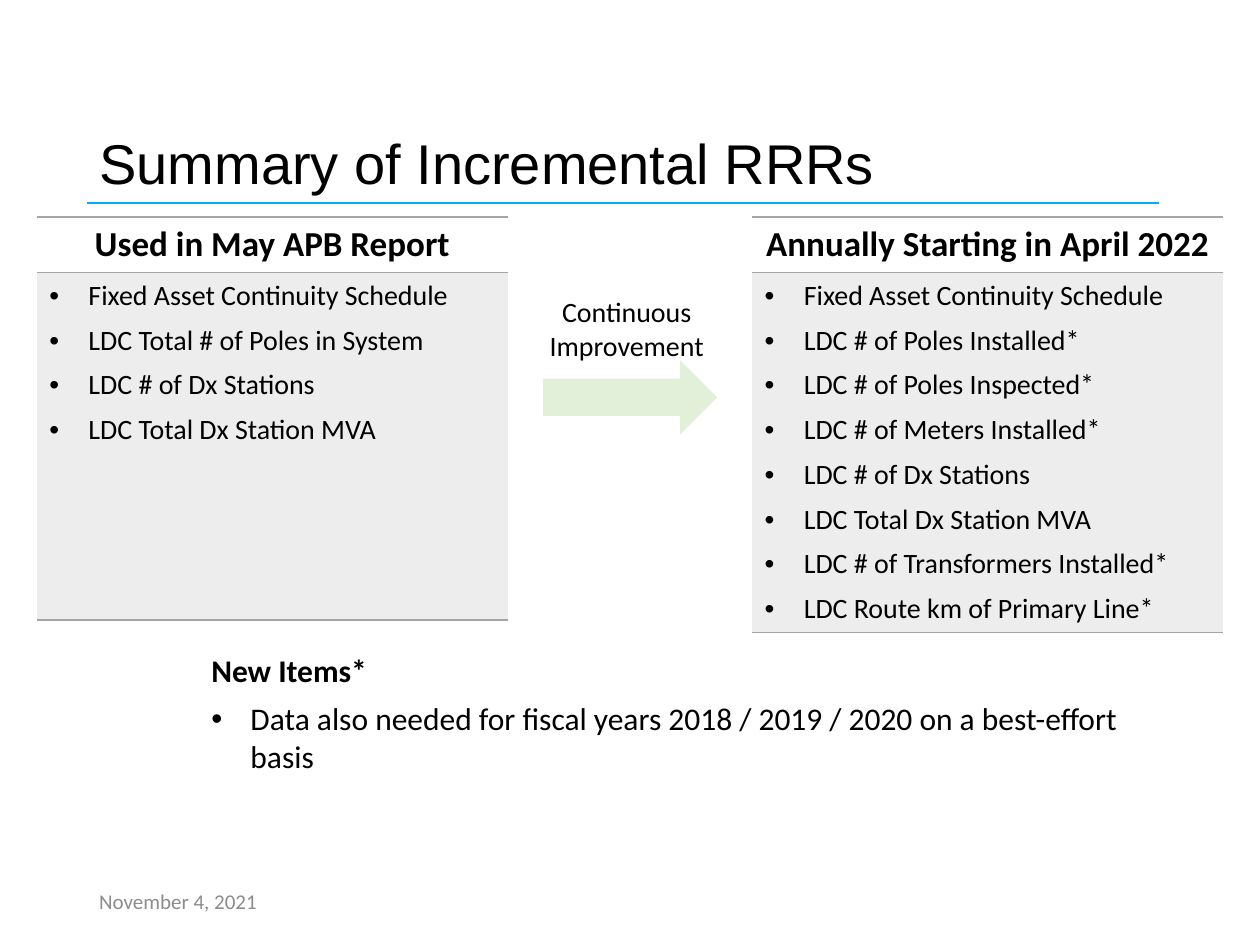
from pptx import Presentation
from pptx.dml.color import RGBColor as RGB
from pptx.enum.shapes import MSO_CONNECTOR as Conn, MSO_SHAPE as Shape
from pptx.enum.text import MSO_ANCHOR as Anchor, MSO_AUTO_SIZE as Fit, PP_ALIGN as Align
from pptx.oxml import parse_xml
from pptx.oxml.ns import nsdecls
from pptx.util import Cm, Pt

THEME = {
    "ink": "000000", "muted": "8C8C8C", "rule": "00B0F0", "edge": "A5A5A5",
    "panel": "EDEDED", "arrow": "E2F0D9",
    "head": "Arial", "body": "Calibri",
    "title": 32, "label": 20, "note": 18, "item": 16, "date": 12,
}
TITLE = "Summary of Incremental RRRs"
LISTS = [
    ("Used in May APB Report", [
        "Fixed Asset Continuity Schedule",
        "LDC Total # of Poles in System",
        "LDC # of Dx Stations",
        "LDC Total Dx Station MVA",
    ]),
    ("Annually Starting in April 2022", [
        "Fixed Asset Continuity Schedule",
        "LDC # of Poles Installed*",
        "LDC # of Poles Inspected*",
        "LDC # of Meters Installed*",
        "LDC # of Dx Stations",
        "LDC Total Dx Station MVA",
        "LDC # of Transformers Installed*",
        "LDC Route km of Primary Line*",
    ]),
]
CHANGE = "Continuous Improvement"
NOTE = ("New Items*",
        "Data also needed for fiscal years 2018 / 2019 / 2020 on a best-effort basis")
DATE = "November 4, 2021"

WIDE, HIGH = 25.4, 19.05
LEFT = 1.75
RULE_Y = 4.09
SIDE, TOP, COL = 0.74, 4.37, 9.5
ROWS = (1.09, 7.01)
INDENT = 0.79
PLAIN = "{2D5ABB26-0587-4C30-8999-92F81FD0307C}"


def place(shape, *box):
    for name, value in zip(("left", "top", "width", "height"), box):
        setattr(shape, name, Cm(value))


def write(par, text, size, color="ink", face="body", bold=False, dot=False, **form):
    par.text = text
    if dot:
        props = par._p.get_or_add_pPr()
        props.set("marL", str(Cm(INDENT)))
        props.set("indent", str(-Cm(INDENT)))
        props.append(parse_xml(f'<a:buFont {nsdecls("a")} typeface="Arial"/>'))
        props.append(parse_xml(f'<a:buChar {nsdecls("a")} char="•"/>'))
    for name, value in form.items():
        setattr(par, name, value)
    font = par.runs[0].font
    look = {"name": THEME[face], "size": Pt(THEME[size]), "bold": bold}
    for name, value in look.items():
        setattr(font, name, value)
    font.color.rgb = RGB.from_string(THEME[color])


def add_box(slide, box, **form):
    frame = slide.shapes.add_textbox(*map(Cm, box)).text_frame
    for name, value in {"word_wrap": True, **form}.items():
        setattr(frame, name, value)
    return frame


def edge(cell, *sides):
    """Draw thin lines on the given sides, T before B."""
    props = cell._tc.get_or_add_tcPr()
    for at, side in enumerate(sides):
        props.insert(at, parse_xml(
            f'<a:ln{side} {nsdecls("a")} w="{Pt(1)}"><a:solidFill>'
            f'<a:srgbClr val="{THEME["edge"]}"/></a:solidFill></a:ln{side}>'))


def add_list(slide, left, label, items):
    frame = slide.shapes.add_table(2, 1, *map(Cm, (left, TOP, COL, sum(ROWS))))
    table = frame.table
    table.first_row = table.horz_banding = False
    table._tbl.tblPr.find("{*}tableStyleId").text = PLAIN
    for row, high in zip(table.rows, ROWS):
        row.height = Cm(high)
    head, body = table.cell(0, 0), table.cell(1, 0)
    head.fill.background()
    body.fill.solid()
    body.fill.fore_color.rgb = RGB.from_string(THEME["panel"])
    edge(head, "T", "B")
    edge(body, "T", "B")
    write(head.text_frame.paragraphs[0], label, "label", bold=True,
          alignment=Align.CENTER)
    text = body.text_frame
    for at, item in enumerate(items):
        par = text.add_paragraph() if at else text.paragraphs[0]
        write(par, item, "item", dot=True, space_before=Pt(6 if at else 0))


def main():
    deck = Presentation()
    deck.slide_width, deck.slide_height = Cm(WIDE), Cm(HIGH)
    slide = deck.slides.add_slide(deck.slide_layouts[5])

    rule = slide.shapes.add_connector(
        Conn.STRAIGHT, *map(Cm, (LEFT, RULE_Y, 23.37, RULE_Y)))
    rule.line.color.rgb = RGB.from_string(THEME["rule"])
    rule.line.width = Pt(1.5)
    rule._element.spPr.append(parse_xml(f'<a:effectLst {nsdecls("a")}/>'))

    title = slide.shapes.title
    place(title, LEFT, 0.41, 21.9, 3.68)
    title.text_frame.vertical_anchor = Anchor.BOTTOM
    write(title.text_frame.paragraphs[0], TITLE, "title", face="head",
          alignment=Align.LEFT, line_spacing=0.9)

    for left, (label, items) in zip((SIDE, WIDE - SIDE - COL), LISTS):
        add_list(slide, left, label, items)

    arrow = slide.shapes.add_shape(
        Shape.RIGHT_ARROW, *map(Cm, (10.95, 7.26, 3.51, 1.5)))
    arrow.shadow.inherit = False
    arrow.fill.solid()
    arrow.fill.fore_color.rgb = RGB.from_string(THEME["arrow"])
    arrow.line.fill.background()

    change = add_box(slide, (10.64, 5.61, 3.99, 2.01), vertical_anchor=Anchor.MIDDLE,
                     auto_size=Fit.SHAPE_TO_FIT_TEXT)
    write(change.paragraphs[0], CHANGE, "item", alignment=Align.CENTER)

    note = add_box(slide, (4.01, 13, 20.14, 2.77), auto_size=Fit.SHAPE_TO_FIT_TEXT)
    label, detail = NOTE
    write(note.paragraphs[0], label, "note", bold=True, space_after=Pt(6))
    write(note.add_paragraph(), detail, "note", dot=True, space_after=Pt(6))

    date = add_box(slide, (LEFT, 17.65, 5.72, 1.02), vertical_anchor=Anchor.MIDDLE)
    write(date.paragraphs[0], DATE, "date", color="muted")

    deck.save("out.pptx")


if __name__ == "__main__":
    main()
